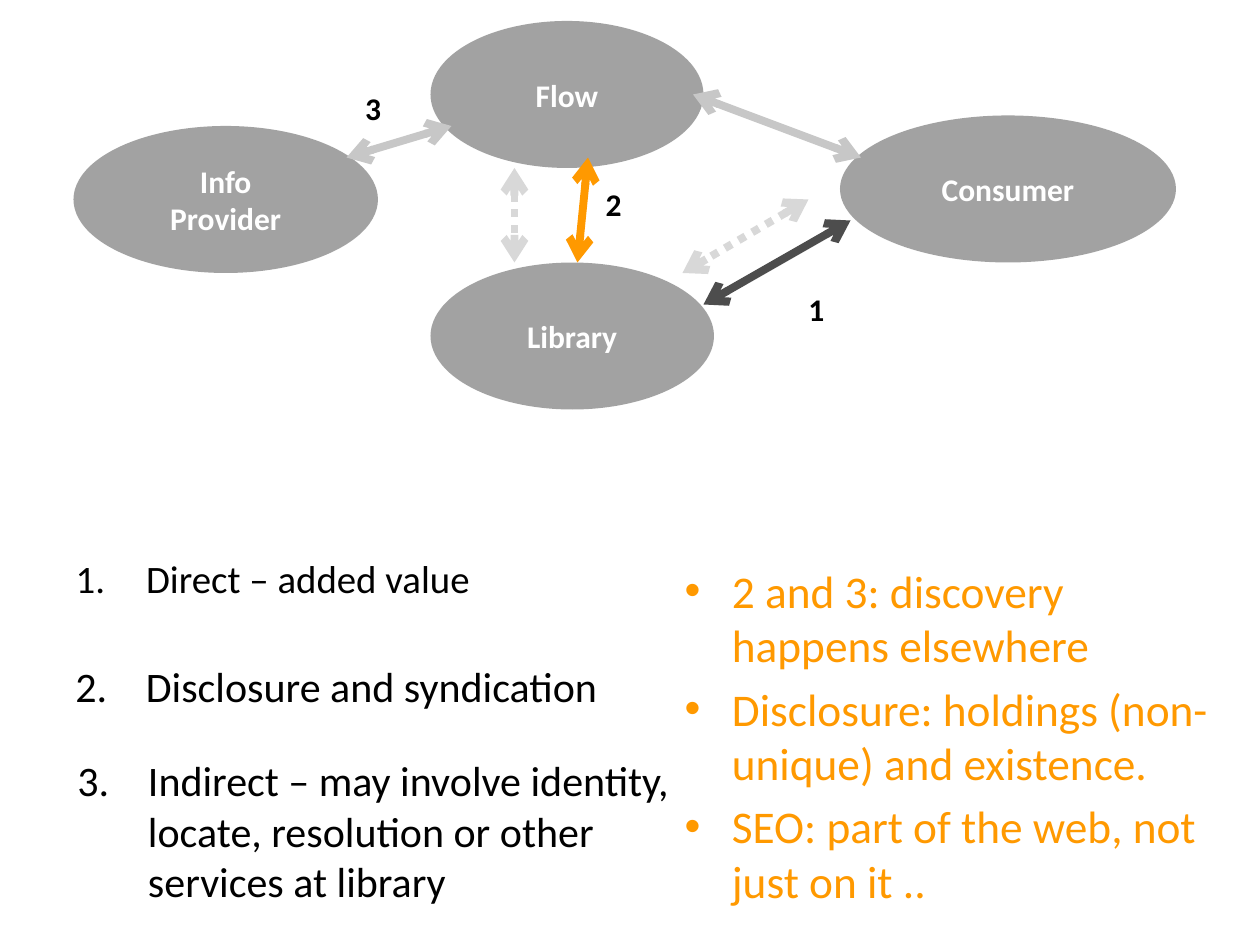
from dataclasses import dataclass
from typing import Optional

from lxml import etree
from pptx import Presentation
from pptx.dml.color import RGBColor
from pptx.enum.dml import MSO_LINE
from pptx.enum.shapes import MSO_CONNECTOR, MSO_SHAPE
from pptx.enum.text import MSO_ANCHOR, MSO_AUTO_SIZE, PP_ALIGN
from pptx.oxml.ns import qn
from pptx.util import Inches, Pt

ELLIPSE = MSO_SHAPE.OVAL
STRAIGHT = MSO_CONNECTOR.STRAIGHT
DOTTED = MSO_LINE.ROUND_DOT
CENTER, LEFT = PP_ALIGN.CENTER, PP_ALIGN.LEFT
TOP, MIDDLE = MSO_ANCHOR.TOP, MSO_ANCHOR.MIDDLE
NO_FIT = MSO_AUTO_SIZE.NONE
TWO_CONTENT_LAYOUT = 3

SLIDE_WIDTH, SLIDE_HEIGHT = Inches(10), Inches(7.5)
COLUMNS, ROWS = 120, 90
NODE_ROWS = 14
LABEL_COLUMNS, LABEL_ROWS = 4, 4.8
NUMBER_INDENT = Inches(0.56)


@dataclass(frozen=True)
class Theme:
    font: str = "Calibri"
    node: str = "737373"
    node_opacity: int = 66
    node_text: str = "FFFFFF"
    text: str = "000000"
    accent: str = "FF9900"
    direct: str = "4D4D4D"
    indirect: str = "C7C7C7"
    potential: str = "D8D8D8"
    label_size: float = 18
    first_step_size: float = 22.2
    step_size: float = 24
    point_size: float = 25.9
    line_width: float = 4.5


THEME = Theme()


@dataclass(frozen=True)
class Node:
    text: str
    column: float
    row: float
    columns: float


@dataclass(frozen=True)
class Flow:
    start: tuple[float, float]
    end: tuple[float, float]
    color: str
    dotted: bool = False


@dataclass(frozen=True)
class Label:
    text: str
    column: float
    row: float


@dataclass(frozen=True)
class Step:
    number: int
    text: str
    box: tuple[float, float, float, float]
    size: float
    placeholder: Optional[int] = None


NODES = [
    Node("Library", 41, 25, 27),
    Node("Consumer", 80, 11, 32),
    Node("Info\vProvider", 7, 12, 29),
    Node("Flow", 41, 2, 26),
]
FLOWS = [
    Flow((67, 29), (81, 21), THEME.direct),
    Flow((56, 15), (55, 25), THEME.accent),
    Flow((43, 12), (33, 15), THEME.indirect),
    Flow((82, 15), (66, 9), THEME.indirect),
    Flow((49, 16), (49, 25), THEME.potential, dotted=True),
    Flow((77, 19), (65, 26), THEME.potential, dotted=True),
]
LABELS = [Label("1", 75.8, 27), Label("2", 56.5, 17), Label("3", 33.6, 7.9)]
STEPS = [
    Step(1, "Direct – added value", (6, 52.2, 53, 8), THEME.first_step_size, placeholder=1),
    Step(2, "Disclosure and syndication", (6, 62.3, 60, 6), THEME.step_size),
    Step(3, "Indirect – may involve identity, locate, resolution or other services at library",
         (6.2, 71.3, 60, 15.7), THEME.step_size),
]
POINTS = [
    "2 and 3: discovery happens elsewhere",
    "Disclosure: holdings (non-unique) and existence.",
    "SEO: part of the web, not just on it ..",
]
POINTS_BOX = (64, 53, 53, 31)


def x(columns: float) -> int:
    return round(SLIDE_WIDTH * columns / COLUMNS)


def y(rows: float) -> int:
    return round(SLIDE_HEIGHT * rows / ROWS)


def grid_box(column: float, row: float, columns: float, rows: float) -> tuple[int, ...]:
    return x(column), y(row), x(columns), y(rows)


def place(shape, box: tuple[float, float, float, float]) -> None:
    shape.left, shape.top, shape.width, shape.height = grid_box(*box)


def write(shape, *lines: str, size: float, color: str = THEME.text, bold: bool = False,
          align=LEFT, anchor=TOP, wrap: bool = True) -> None:
    frame = shape.text_frame
    frame.text = "\n".join(lines)
    frame.word_wrap = wrap
    frame.auto_size = NO_FIT
    frame.vertical_anchor = anchor
    for paragraph in frame.paragraphs:
        paragraph.alignment = align
        for run in paragraph.runs:
            run.font.name = THEME.font
            run.font.size = Pt(size)
            run.font.bold = bold
            run.font.color.rgb = RGBColor.from_string(color)


def number(paragraph, value: int) -> None:
    """Give the paragraph an automatic number and a hanging indent."""
    properties = paragraph._p.get_or_add_pPr()
    properties.set("marL", str(NUMBER_INDENT))
    properties.set("indent", str(-NUMBER_INDENT))
    etree.SubElement(properties, qn("a:buFont"), typeface=THEME.font)
    etree.SubElement(properties, qn("a:buAutoNum"), type="arabicPeriod", startAt=str(value))


def add_node(slide, node: Node) -> None:
    box = grid_box(node.column, node.row, node.columns, NODE_ROWS)
    shape = slide.shapes.add_shape(ELLIPSE, *box)
    shape.shadow.inherit = False
    shape.fill.solid()
    shape.fill.fore_color.rgb = RGBColor.from_string(THEME.node)
    color = shape._element.spPr.find(f".//{qn('a:srgbClr')}")
    etree.SubElement(color, qn("a:alpha"), val=str(THEME.node_opacity * 1000))
    shape.line.fill.background()
    write(shape, node.text, size=THEME.label_size, color=THEME.node_text, bold=True,
          align=CENTER, anchor=MIDDLE)


def add_flow(slide, flow: Flow) -> None:
    (start_column, start_row), (end_column, end_row) = flow.start, flow.end
    connector = slide.shapes.add_connector(
        STRAIGHT, x(start_column), y(start_row), x(end_column), y(end_row))
    connector.line.color.rgb = RGBColor.from_string(flow.color)
    connector.line.width = Pt(THEME.line_width)
    if flow.dotted:
        connector.line.dash_style = DOTTED
    line = connector.line._get_or_add_ln()
    for arrowhead in ("a:headEnd", "a:tailEnd"):
        etree.SubElement(line, qn(arrowhead), type="arrow")
    etree.SubElement(connector._element.spPr, qn("a:effectLst"))


def add_label(slide, label: Label) -> None:
    box = grid_box(label.column, label.row, LABEL_COLUMNS, LABEL_ROWS)
    write(slide.shapes.add_textbox(*box), label.text, size=THEME.label_size, bold=True, wrap=False)


def add_step(slide, step: Step) -> None:
    if step.placeholder is None:
        shape = slide.shapes.add_textbox(*grid_box(*step.box))
    else:
        shape = slide.placeholders[step.placeholder]
        place(shape, step.box)
    write(shape, step.text, size=step.size)
    number(shape.text_frame.paragraphs[0], step.number)


def main() -> None:
    presentation = Presentation()
    presentation.slide_width, presentation.slide_height = SLIDE_WIDTH, SLIDE_HEIGHT
    slide = presentation.slides.add_slide(presentation.slide_layouts[TWO_CONTENT_LAYOUT])
    title = slide.shapes.title._element
    title.getparent().remove(title)

    for draw, items in ((add_node, NODES), (add_flow, FLOWS), (add_label, LABELS), (add_step, STEPS)):
        for item in items:
            draw(slide, item)
    points = slide.placeholders[2]
    place(points, POINTS_BOX)
    write(points, *POINTS, size=THEME.point_size, color=THEME.accent)
    presentation.save("out.pptx")


if __name__ == "__main__":
    main()
